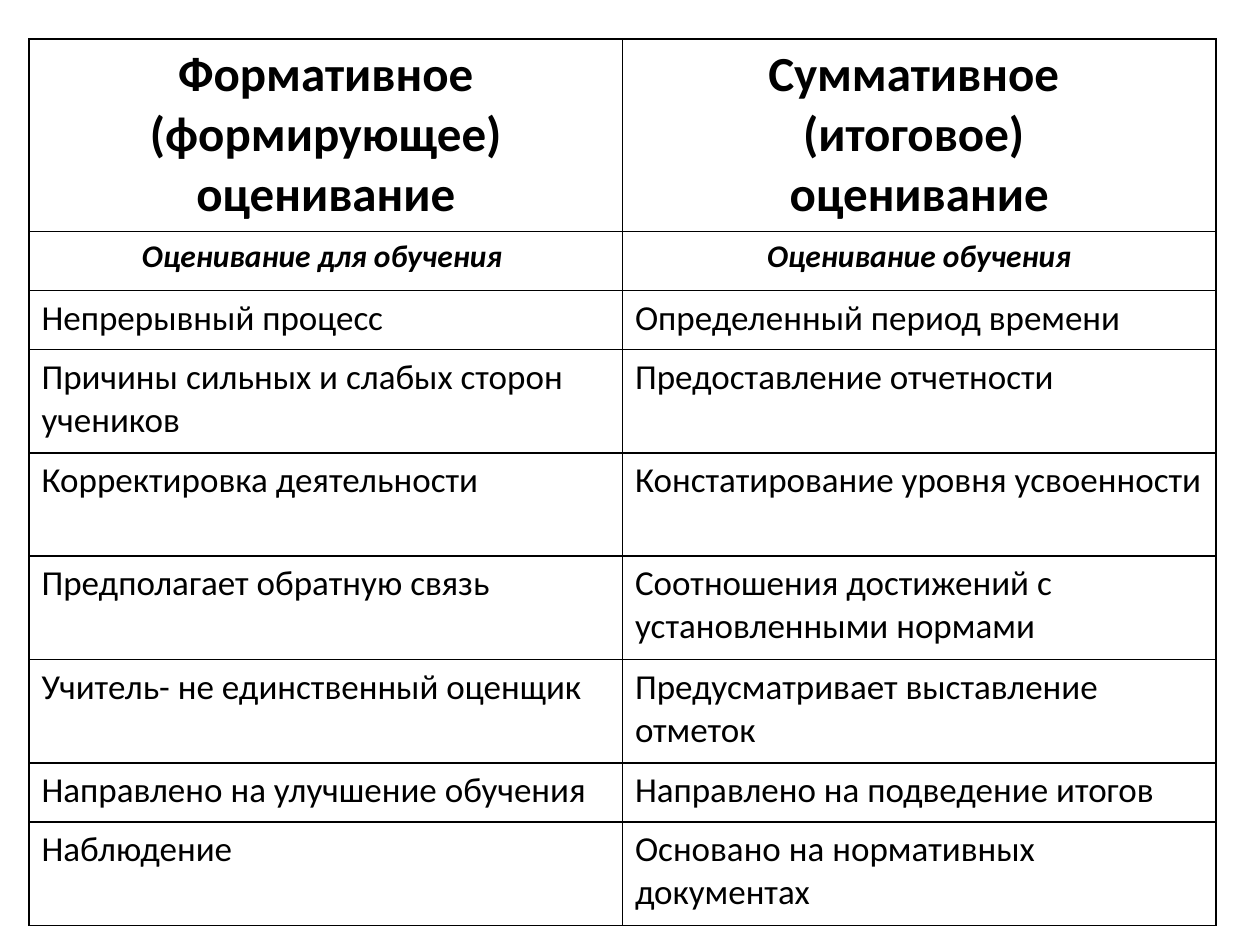
from typing import NamedTuple

from lxml import etree
from pptx import Presentation
from pptx.dml.color import RGBColor
from pptx.enum.text import PP_ALIGN
from pptx.oxml.ns import qn
from pptx.util import Inches, Pt

LEFT, CENTER = PP_ALIGN.LEFT, PP_ALIGN.CENTER
COLORS = {"text": "000000", "border": "000000", "cell": "FFFFFF"}
FONT = "Calibri"
BORDER_WIDTH = Pt(1)
COL_WIDTH = 4.71


class Style(NamedTuple):
    size: int
    bold: bool = False
    italic: bool = False
    align: PP_ALIGN = LEFT


class Row(NamedTuple):
    height: float
    formative: str
    summative: str
    style: Style


HEADING = Style(28, bold=True, align=CENTER)
SUBHEADING = Style(18, bold=True, italic=True, align=CENTER)
BODY = Style(20)
ONE_LINE, TWO_LINES = 0.47, 0.82

ROWS = [
    Row(1.26, "Формативное (формирующее) оценивание",
        "Суммативное \n(итоговое) \nоценивание", HEADING),
    Row(ONE_LINE, "Оценивание для обучения ", "Оценивание обучения", SUBHEADING),
    Row(ONE_LINE, "Непрерывный процесс", "Определенный период времени", BODY),
    Row(TWO_LINES, "Причины сильных и слабых сторон учеников",
        "Предоставление отчетности", BODY),
    Row(TWO_LINES, "Корректировка деятельности",
        "Констатирование уровня усвоенности", BODY),
    Row(TWO_LINES, "Предполагает обратную связь",
        "Соотношения достижений с установленными нормами", BODY),
    Row(TWO_LINES, "Учитель- не единственный оценщик",
        "Предусматривает выставление отметок", BODY),
    Row(ONE_LINE, "Направлено на улучшение обучения",
        "Направлено на подведение итогов", BODY),
    Row(TWO_LINES, "Наблюдение", "Основано на нормативных документах", BODY),
]


def add_borders(cell) -> None:
    # Borders come before the fill in the cell properties
    props = cell._tc.get_or_add_tcPr()
    for i, side in enumerate(("a:lnL", "a:lnR", "a:lnT", "a:lnB")):
        line = etree.Element(qn(side), w=str(BORDER_WIDTH))
        fill = etree.SubElement(line, qn("a:solidFill"))
        etree.SubElement(fill, qn("a:srgbClr"), val=COLORS["border"])
        props.insert(i, line)


def fill_cell(cell, text: str, style: Style) -> None:
    cell.fill.solid()
    cell.fill.fore_color.rgb = RGBColor.from_string(COLORS["cell"])
    add_borders(cell)
    cell.text = text
    for p in cell.text_frame.paragraphs:
        p.alignment = style.align
        p.font.name = FONT
        p.font.size = Pt(style.size)
        p.font.bold = style.bold
        p.font.italic = style.italic
        p.font.color.rgb = RGBColor.from_string(COLORS["text"])


def main() -> None:
    prs = Presentation()
    prs.slide_width, prs.slide_height = Inches(10), Inches(7.5)
    s = prs.slides.add_slide(prs.slide_layouts[6])

    # Comparison table
    height = sum(row.height for row in ROWS)
    table = s.shapes.add_table(len(ROWS), 2, Inches(0.23), Inches(0.31),
                               Inches(2 * COL_WIDTH), Inches(height)).table
    for column in table.columns:
        column.width = Inches(COL_WIDTH)
    for i, row in enumerate(ROWS):
        table.rows[i].height = Inches(row.height)
        for j, text in enumerate((row.formative, row.summative)):
            fill_cell(table.cell(i, j), text, row.style)

    prs.save("out.pptx")


if __name__ == "__main__":
    main()
